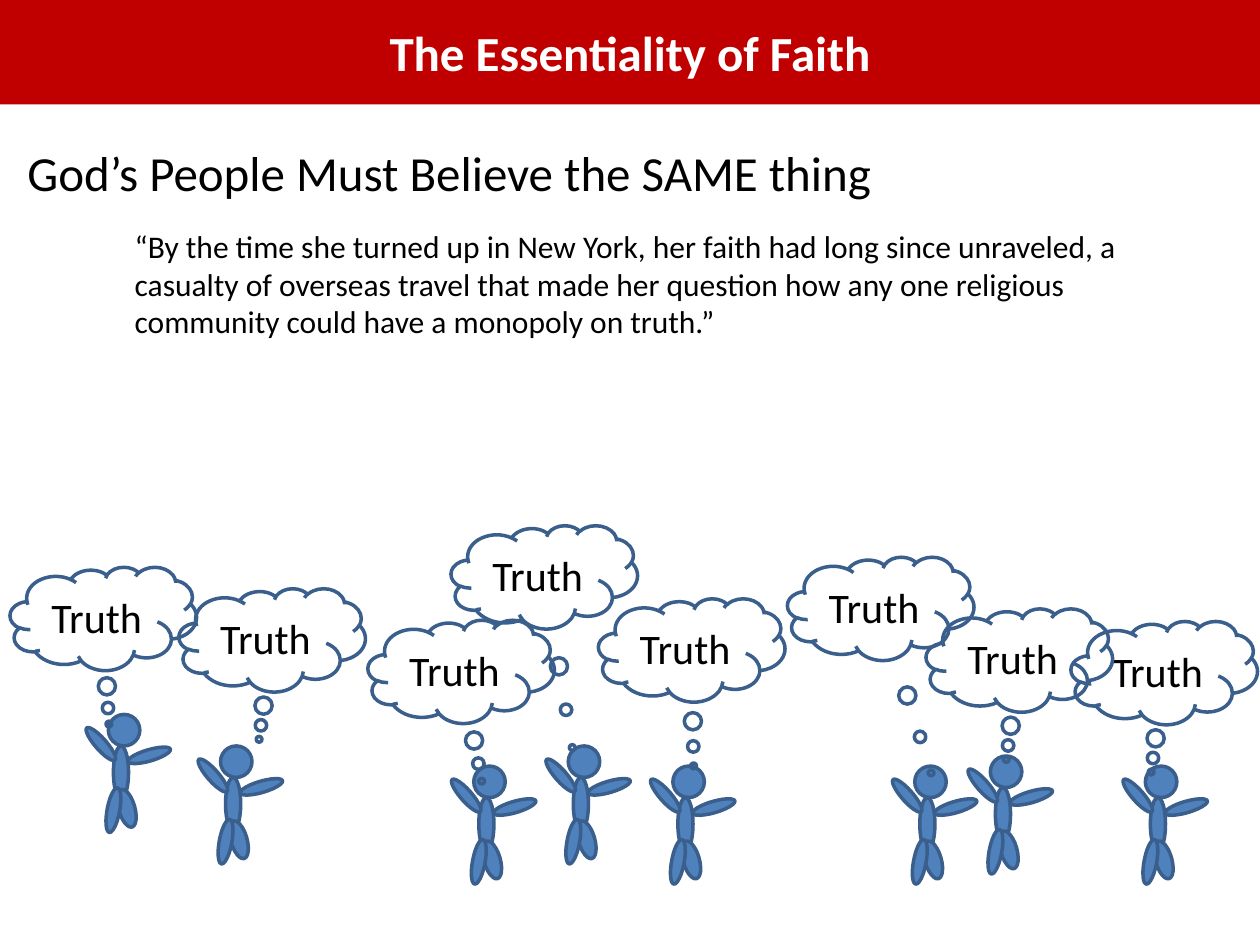
from pptx import Presentation
from pptx import util as u
from pptx.dml.color import RGBColor
from pptx.enum import shapes, text

# Content
TITLE = "The Essentiality of Faith"
HEADING = "God’s People Must Believe the SAME thing"
QUOTE = (
    "“By the time she turned up in New York, her faith had long since unraveled, "
    "a casualty of overseas travel that made her question how any one religious "
    "community could have a monopoly on truth.”"
)
THOUGHT = "Truth"

# Left and top of each person's head
PEOPLE = [
    (1.75, 5.92), (3.76, 6.08), (4.51, 5.92), (5.34, 6.08),
    (0.86, 5.67), (7.26, 6.08), (7.86, 6), (9.09, 6.08),
]
# Body parts relative to the head: left, top, width, height, rotation
BODY_PARTS = [
    (0, 0, 0.25, 0.25, 0),             # head
    (0.04, 0.25, 0.12, 0.42, 0),       # torso
    (0.15, 0.28, 0.35, 0.09, 343.7),   # right arm
    (-0.23, 0.19, 0.34, 0.09, 48.7),   # left arm
    (-0.01, 0.68, 0.31, 0.13, 73.9),   # right leg
    (-0.14, 0.71, 0.36, 0.1, 100.5),   # left leg
]
# Thought clouds: left, top, tail offset across, tail offset down
CLOUDS = [
    (8.5, 4.93, -0.07, 0.96), (7.35, 4.83, -0.07, 0.96),
    (6.25, 4.42, 0.27, 1.59), (4.75, 4.75, 0.01, 1.12),
    (3.58, 4.17, 0.15, 1.65), (2.92, 4.92, 0.11, 1.06),
    (1.42, 4.67, -0.07, 0.96), (0.08, 4.5, 0.03, 1.02),
]
CLOUD_SIZE = (1.48, 0.82)

RED, BLUE, OUTLINE = "C00000", "4F81BD", "3A5F8C"
WHITE, BLACK = "FFFFFF", "000000"


def color(value):
    return RGBColor.from_string(value)


def inches(*values):
    return [u.Inches(value) for value in values]


def add_shape(parent, kind, box, fill=None, outline=None):
    shape = parent.add_shape(kind, *inches(*box))
    shape.shadow.inherit = False
    if fill:
        shape.fill.solid()
        shape.fill.fore_color.rgb = color(fill)
    else:
        shape.fill.background()
    if outline:
        shape.line.color.rgb = color(outline)
        shape.line.width = u.Pt(2)
    else:
        shape.line.fill.background()
    return shape


def write(shape, words, size, ink=BLACK, bold=False, align=text.PP_ALIGN.LEFT, **frame_format):
    frame = shape.text_frame
    for name, value in {"word_wrap": True, **frame_format}.items():
        setattr(frame, name, value)
    paragraph = frame.paragraphs[0]
    paragraph.alignment = align
    run = paragraph.add_run()
    run.text = words
    for name, value in {"name": "Calibri", "size": u.Pt(size), "bold": bold}.items():
        setattr(run.font, name, value)
    run.font.color.rgb = color(ink)


presentation = Presentation()
presentation.slide_width, presentation.slide_height = inches(10, 7.5)
slide = presentation.slides.add_slide(presentation.slide_layouts[6])
centered = {"align": text.PP_ALIGN.CENTER, "vertical_anchor": text.MSO_ANCHOR.MIDDLE}

# Title band
band = add_shape(slide.shapes, shapes.MSO_SHAPE.RECTANGLE, (0, 0, 10, 0.83), RED)
write(band, TITLE, 28, WHITE, True, **centered)

# Heading and quotation
for words, size, box in [
    (HEADING, 28, (0.12, 1.08, 9.76, 0.57)),
    (QUOTE, 18, (0.97, 1.75, 8.05, 1.01)),
]:
    write(slide.shapes.add_textbox(*inches(*box)), words, size,
          auto_size=text.MSO_AUTO_SIZE.SHAPE_TO_FIT_TEXT)

# People, one group each
for head_left, head_top in PEOPLE:
    person = slide.shapes.add_group_shape()
    for left, top, width, height, rotation in BODY_PARTS:
        box = (head_left + left, head_top + top, width, height)
        part = add_shape(person.shapes, shapes.MSO_SHAPE.OVAL, box, BLUE, OUTLINE)
        part.rotation = rotation

# Thought clouds
for left, top, *tail in CLOUDS:
    cloud = add_shape(slide.shapes, shapes.MSO_SHAPE.CLOUD_CALLOUT,
                      (left, top, *CLOUD_SIZE), outline=OUTLINE)
    for index, offset in enumerate(tail):
        cloud.adjustments[index] = offset
    write(cloud, THOUGHT, 24, **centered)

presentation.save("out.pptx")
